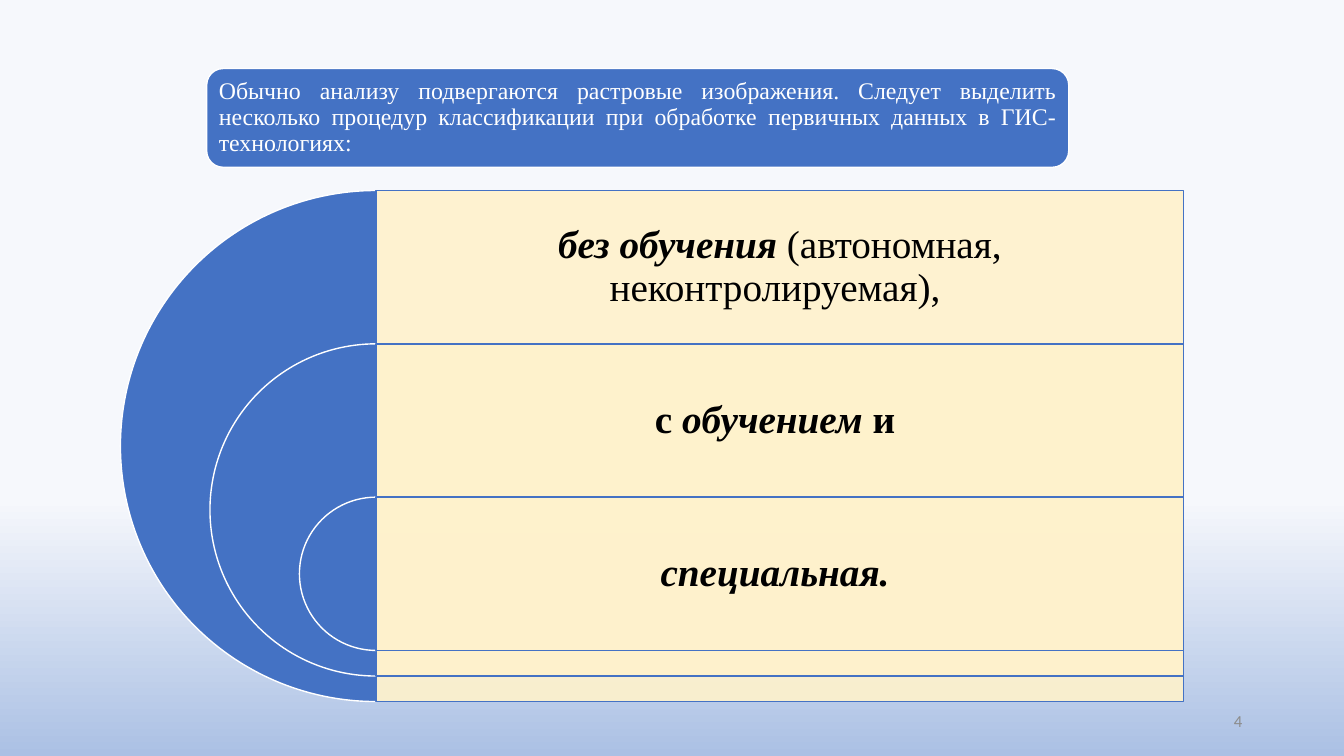
from dataclasses import dataclass

from lxml import etree
from pptx import Presentation
from pptx.dml.color import RGBColor
from pptx.enum.shapes import MSO_SHAPE
from pptx.enum.text import MSO_ANCHOR, MSO_AUTO_SIZE, PP_ALIGN
from pptx.oxml.ns import qn
from pptx.util import Inches, Pt

PIE, RECT, ROUNDED = MSO_SHAPE.PIE, MSO_SHAPE.RECTANGLE, MSO_SHAPE.ROUNDED_RECTANGLE
LEFT_HALF = (54, 162)  # pie from 90 to 270 degrees
CENTER, JUSTIFY, RIGHT = PP_ALIGN.CENTER, PP_ALIGN.JUSTIFY, PP_ALIGN.RIGHT
MIDDLE, NO_AUTOFIT = MSO_ANCHOR.MIDDLE, MSO_AUTO_SIZE.NONE

BLUE, CREAM, WHITE, BLACK, GREY = "4472C4", "FFF2CC", "FFFFFF", "000000", "8C8C8C"
SKY_TOP, SKY_BOTTOM = "F6F8FC", "ABC0E4"
SERIF, SANS = "Times New Roman", "Calibri"

# Stacked diagram: each ring's size is a share of the largest one
AXIS_X, TOP, DIAMETER, PANEL_W = 3.73, 1.89, 5.07, 8.01
ROW_H = 0.3 * DIAMETER


@dataclass
class Box:
    left: float
    top: float
    width: float
    height: float

    def inset(self, gap: float) -> "Box":
        return Box(self.left + gap, self.top + gap,
                   self.width - 2 * gap, self.height - 2 * gap)

    def emu(self) -> list:
        return [Inches(v) for v in (self.left, self.top, self.width, self.height)]


@dataclass
class Run:
    text: str
    bold: bool = False
    italic: bool = False


@dataclass
class Ring:
    share: float
    runs: list


HEADING = Run("Обычно анализу подвергаются растровые изображения. Следует выделить "
              "несколько процедур классификации при обработке первичных данных "
              "в ГИС-технологиях: ")
RINGS = [
    Ring(1.0, [Run("без обучения ", True, True),
               Run("(автономная, неконтролируемая), ")]),
    Ring(0.65, [Run("с ", True), Run("обучением ", True, True), Run("и ", True)]),
    Ring(0.3, [Run("специальная. ", True, True)]),
]


def rgb(color: str) -> RGBColor:
    return RGBColor.from_string(color)


def add_block(s, kind, box: Box, fill: str, line: str):
    sp = s.shapes.add_shape(kind, *box.emu())
    sp.shadow.inherit = False
    sp.fill.solid()
    sp.fill.fore_color.rgb = rgb(fill)
    sp.line.color.rgb = rgb(line)
    sp.line.width = Pt(1)
    return sp


def set_opacity(sp, percent: int) -> None:
    color = sp.fill._xPr.find(qn("a:solidFill"))[0]
    etree.SubElement(color, qn("a:alpha"), val=str(percent * 1000))


def write(sp, runs: list, size: float, font: str, color: str, align,
          margins: tuple, spacing: float = 1.0) -> None:
    tf = sp.text_frame
    tf.word_wrap = True
    tf.auto_size = NO_AUTOFIT
    tf.vertical_anchor = MIDDLE
    tf.margin_left = tf.margin_right = Inches(margins[0])
    tf.margin_top = tf.margin_bottom = Inches(margins[1])
    p = tf.paragraphs[0]
    p.alignment = align
    p.line_spacing = spacing
    p.space_before = Pt(0)
    p.font.size = Pt(size)
    p.font.name = font
    p.font.color.rgb = rgb(color)
    for run in runs:
        r = p.add_run()
        r.text = run.text
        r.font.bold = run.bold
        r.font.italic = run.italic


def paint_background(s) -> None:
    fill = s.background.fill
    fill.gradient()
    fill.gradient_angle = 270
    for stop, position, color in zip(fill.gradient_stops, (0.66, 1.0),
                                     (SKY_TOP, SKY_BOTTOM)):
        stop.position = position
        stop.color.rgb = rgb(color)


def add_heading(s) -> None:
    box = Box(2.05, 0.68, 8.55, 0.98)
    add_block(s, ROUNDED, box, BLUE, WHITE)
    title = s.shapes.title
    title.left, title.top, title.width, title.height = box.inset(0.05).emu()
    write(title, [HEADING], 17, SERIF, WHITE, JUSTIFY, (0.07, 0.07), 0.9)
    s.shapes._spTree.append(title._element)  # bring in front of its panel


def add_ring(s, row: int, ring: Ring) -> None:
    top, size = TOP + row * ROW_H, ring.share * DIAMETER
    pie = add_block(s, PIE, Box(AXIS_X - size / 2, top, size, size), BLUE, WHITE)
    pie.adjustments[0], pie.adjustments[1] = LEFT_HALF
    panel = add_block(s, RECT, Box(AXIS_X, top, PANEL_W, size), CREAM, BLUE)
    set_opacity(panel, 90)
    label = s.shapes.add_textbox(*Box(AXIS_X, top, PANEL_W, ROW_H).emu())
    write(label, ring.runs, 28, SERIF, BLACK, CENTER, (0.12, 0.12), 0.9)


def main() -> None:
    prs = Presentation()
    prs.slide_width, prs.slide_height = Inches(13.33), Inches(7.5)
    s = prs.slides.add_slide(prs.slide_layouts[5])
    paint_background(s)

    # Slide number
    number = s.shapes.add_textbox(*Box(9.42, 6.95, 3, 0.4).emu())
    write(number, [Run("4")], 12, SANS, GREY, RIGHT, (0.1, 0.05))

    # Heading and the three nested procedures
    add_heading(s)
    for row, ring in enumerate(RINGS):
        add_ring(s, row, ring)
    prs.save("out.pptx")


if __name__ == "__main__":
    main()
